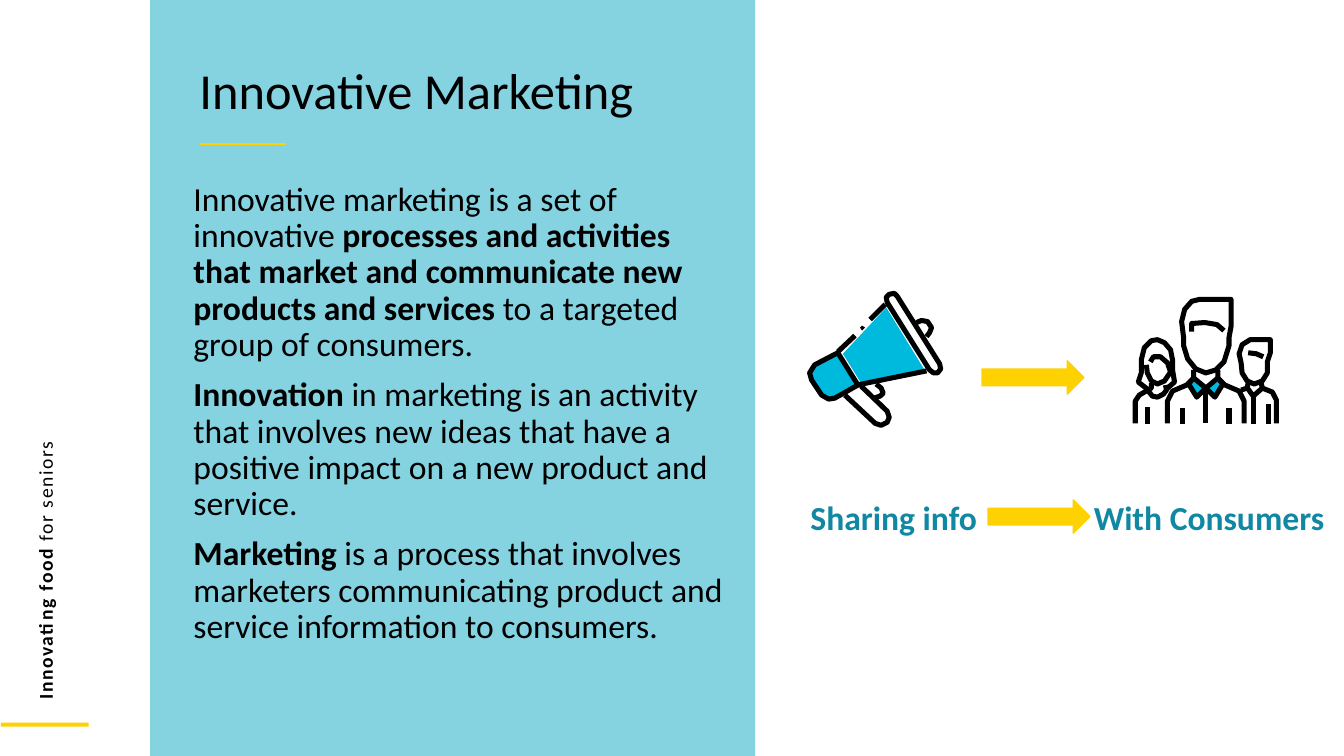
import pptx
import pptx.dml.color
import pptx.enum.shapes
import pptx.util

Inches = pptx.util.Inches
SHAPES = pptx.enum.shapes.MSO_SHAPE
BLACK, CYAN = "000000", "00BADE"
PANEL, YELLOW, ARROW, TEAL = "85D2E1", "FFD100", "FED100", "1188A3"
STROKE = 3.6

HORN = [(79, 17), (117, 79), (54, 92), (36, 63)]
HORN_BACK = [(8, 74), (31, 62), (51, 94), (28, 107), (22, 108), (15, 104), (5, 89), (3, 82)]
MEGAPHONE_DOT = [(53, 37), (55, 35), (58, 37), (55, 40)]
MEGAPHONE_LINES = [
    ([(109, 32), (114, 30), (120, 31), (124, 37), (122, 42), (119, 46)], False),
    ([(38, 104), (68, 132), (74, 134), (80, 131), (82, 126), (80, 120), (54, 95)], False),
    ([(69, 93), (74, 97), (76, 102), (73, 105), (67, 107)], False),
    ([(119, 80), (50, 94)], False),
    (HORN_BACK, True),
    ([(80, 12), (122, 79), (126, 82), (130, 82), (133, 78), (132, 73), (90, 6),
      (87, 3), (82, 4), (79, 7)], True),
    ([(63, 29), (78, 14)], False),
    ([(31, 61), (48, 45)], False),
]

COLLAR = [(55, 87), (63, 100), (72, 91), (60, 81)]
MAN_CENTRE = 72
MAN_SIDE = [
    ([(34, 126), (34, 104), (39, 94), (53, 88), (60, 81), (60, 73)], False),
    (COLLAR, True),
    ([(49, 111), (49, 127)], False),
]
MAN_MIDDLE = [
    ([(97, 3), (66, 3), (58, 5), (51, 13), (48, 25), (50, 41), (50, 49), (54, 62),
      (62, 72), (72, 76), (82, 73), (90, 65), (95, 49), (95, 41), (97, 30)], True),
    ([(58, 35), (58, 27), (71, 26), (83, 28), (90, 34)], False),
    ([(MAN_CENTRE, 91), (MAN_CENTRE, 126)], False),
]
WOMAN = [
    ([(14, 92), (5, 85), (8, 76), (8, 63), (11, 51), (18, 44), (24, 43), (31, 46),
      (37, 53), (39, 63), (39, 73), (41, 85), (33, 92)], False),
    ([(13, 68), (14, 76), (18, 84), (24, 87), (31, 84), (37, 75), (34, 66),
      (27, 60), (20, 60), (17, 65)], False),
    ([(2, 126), (2, 104), (6, 98), (18, 91), (18, 86)], False),
    ([(15, 94), (19, 99), (24, 100), (30, 97), (33, 93), (32, 88)], False),
    ([(14, 110), (14, 127)], False),
]
BOY = [
    ([(136, 43), (116, 43), (108, 48), (105, 57), (107, 66), (108, 76), (113, 84),
      (120, 87), (128, 84), (133, 76), (133, 65), (136, 56)], True),
    ([(114, 56), (122, 57), (129, 60)], False),
    ([(127, 86), (128, 91), (138, 95), (142, 103), (142, 126)], False),
    ([(114, 86), (113, 91), (107, 93)], False),
    ([(114, 92), (119, 99), (127, 92)], False),
    ([(119, 99), (119, 127)], False),
    ([(134, 107), (134, 127)], False),
]


def rgb(value):
    return pptx.dml.color.RGBColor.from_string(value)


def paint(shape, fill=None, line=None, line_width=1):
    shape.shadow.inherit = False
    if fill:
        shape.fill.solid()
        shape.fill.fore_color.rgb = rgb(fill)
    else:
        shape.fill.background()
    if line:
        shape.line.color.rgb = rgb(line)
        shape.line.width = pptx.util.Pt(line_width)
    else:
        shape.line.fill.background()


def add_block(slide, preset, box, fill, line=None):
    paint(slide.shapes.add_shape(preset, *map(Inches, box)), fill, line)


def add_text(slide, box, paragraphs, size, color=BLACK, line_spacing=1.0,
             space_before=0, indent=0, tracking=0):
    text_box = slide.shapes.add_textbox(*map(Inches, box))
    frame = text_box.text_frame
    frame.word_wrap = True
    for index, runs in enumerate(paragraphs):
        paragraph = frame.paragraphs[0] if index == 0 else frame.add_paragraph()
        paragraph.line_spacing = line_spacing
        paragraph.space_before = pptx.util.Pt(space_before if index else 0)
        if indent:
            properties = paragraph._p.get_or_add_pPr()
            properties.set("marL", str(Inches(indent)))
            properties.set("indent", "0")
        for text, bold in runs:
            run = paragraph.add_run()
            run.text = text
            run.font.color.rgb = rgb(color)
            font_format = {"name": "Calibri", "size": pptx.util.Pt(size), "bold": bold}
            for name, value in font_format.items():
                setattr(run.font, name, value)
            if tracking:
                run._r.get_or_add_rPr().set("spc", str(tracking))
    return text_box


def add_outline(group, left, top, contours):
    builder = group.shapes.build_freeform(*contours[0][0][0], scale=Inches(0.01))
    for index, (points, closed) in enumerate(contours):
        if index:
            builder.move_to(*points[0])
        builder.add_line_segments(points[1:], close=closed)
    return builder.convert_to_shape(Inches(left), Inches(top))


def add_icon(slide, left, top, areas, contours):
    group = slide.shapes.add_group_shape()
    for points, color in areas:
        paint(add_outline(group, left, top, [(points, True)]), color)
    paint(add_outline(group, left, top, contours), line=BLACK, line_width=STROKE)


def mirror(points):
    return [(2 * MAN_CENTRE - x, y) for x, y in points]


def build_side_strip(slide, left, top):
    add_block(slide, SHAPES.RECTANGLE, (left + 0.01, top + 7.17, 0.87, 0.04), YELLOW)
    label = add_text(slide, (left - 3.32, top + 3.1, 7.54, 0.34),
                     [[("Innovating food ", True), ("for seniors", False)]], 14, tracking=110)
    label.rotation = 270


def build_text_panel(slide, left, top, width, height):
    add_block(slide, SHAPES.RECTANGLE, (left, top, width, height), PANEL)
    add_block(slide, SHAPES.RECTANGLE, (left + 0.49, top + 1.42, 0.86, 0.02), YELLOW)
    add_text(slide, (left + 0.39, top + 0.65, 5.16, 0.64), [[("Innovative Marketing", False)]],
             36, line_spacing=0.8)
    paragraphs = [
        [("Innovative marketing is a set of innovative ", False),
         ("processes and activities that market and communicate new products and services ", True),
         ("to a targeted group of consumers.", False)],
        [("Innovation", True),
         (" in marketing is an activity that involves new ideas that have a positive impact "
          "on a new product and service.", False)],
        [("Marketing ", True),
         ("is a process that involves marketers communicating product and service "
          "information to consumers.", False)],
    ]
    add_text(slide, (left + 0.08, top + 1.76, 5.79, 5.13), paragraphs, 24,
             line_spacing=0.9, space_before=10, indent=0.25)


def build_sharing_diagram(slide, left, top):
    add_icon(slide, left + 0.06, top,
             [(HORN, CYAN), (HORN_BACK, CYAN), (MEGAPHONE_DOT, BLACK)], MEGAPHONE_LINES)
    mirrored_side = [(mirror(points), closed) for points, closed in MAN_SIDE]
    add_icon(slide, left + 3.3, top + 0.06, [(COLLAR, CYAN), (mirror(COLLAR), CYAN)],
             WOMAN + BOY + MAN_MIDDLE + MAN_SIDE + mirrored_side)
    labels = [("Sharing info", 0, 1.88), ("With Consumers", 2.81, 2.81)]
    for text, offset, width in labels:
        add_text(slide, (left + offset, top + 2, width, 0.5), [[(text, True)]], 24, color=TEAL)
    for across, down in [(1.8, 0.7), (1.86, 2.08)]:
        add_block(slide, SHAPES.RIGHT_ARROW, (left + across, top + down, 1.01, 0.33), ARROW, ARROW)


def main():
    presentation = pptx.Presentation()
    presentation.slide_width = Inches(13.33)
    presentation.slide_height = Inches(7.5)
    slide = presentation.slides.add_slide(presentation.slide_layouts[6])
    build_text_panel(slide, 1.49, 0, 6, 7.5)
    build_side_strip(slide, 0, 0)
    build_sharing_diagram(slide, 7.94, 2.88)
    presentation.save("out.pptx")


if __name__ == "__main__":
    main()
